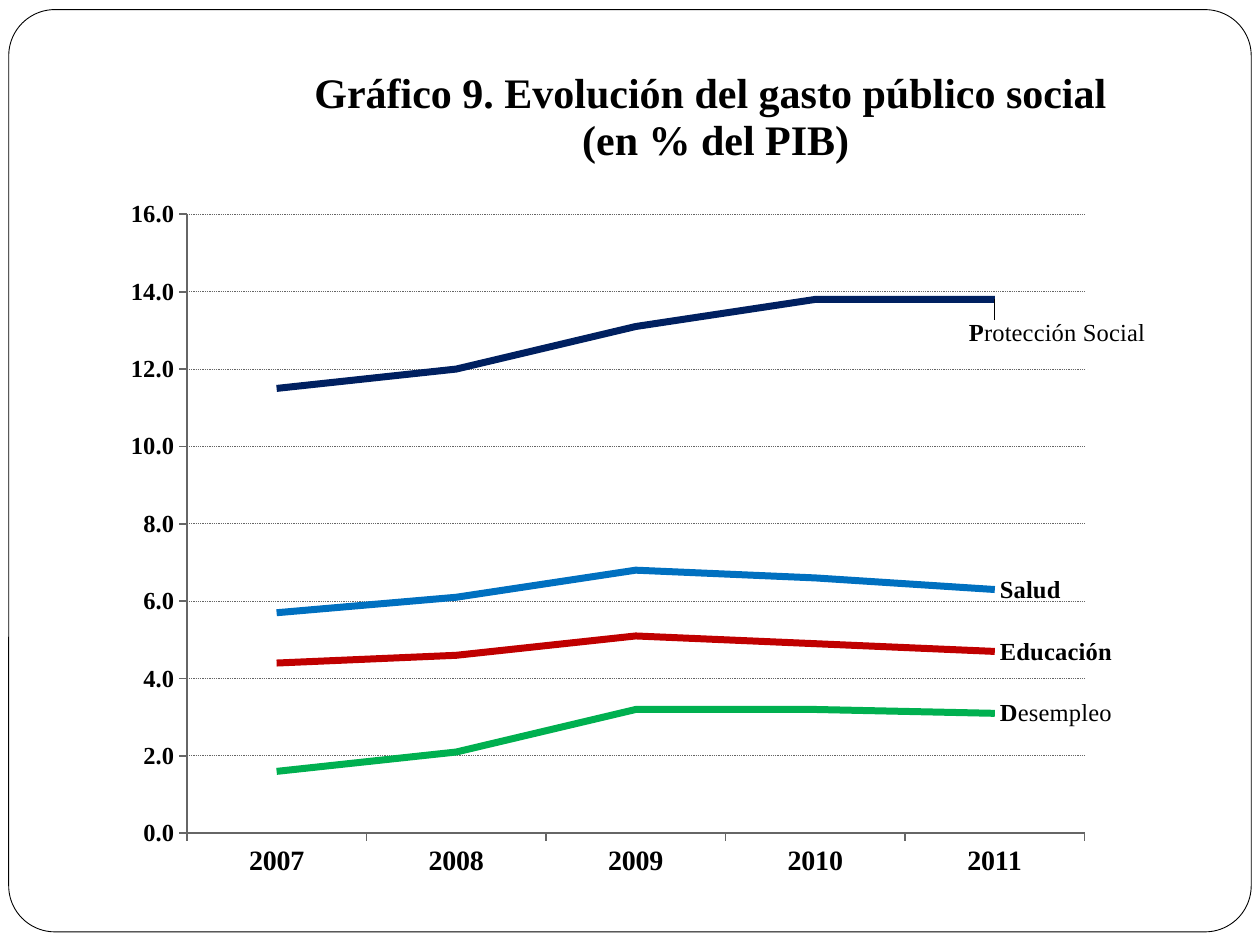
"""Build a slide with a line chart of public social spending as a share of GDP."""
from pptx import Presentation
from pptx.chart.data import CategoryChartData
from pptx.dml.color import RGBColor
from pptx.enum.chart import XL_CHART_TYPE, XL_LABEL_POSITION, XL_TICK_MARK
from pptx.enum.dml import MSO_LINE
from pptx.enum.shapes import MSO_SHAPE
from pptx.oxml import parse_xml
from pptx.oxml.ns import nsdecls
from pptx.util import Pt

YEARS = ["2007", "2008", "2009", "2010", "2011"]
SERIES = [
    ("Series 1", [5.7, 6.1, 6.8, 6.6, 6.3], "0070C0", ("Salud", "")),
    ("Series 2", [4.4, 4.6, 5.1, 4.9, 4.7], "C00000", ("Educación", "")),
    ("Series 3", [1.6, 2.1, 3.2, 3.2, 3.1], "00B050", ("D", "esempleo")),
    ("Series 4", [11.5, 12, 13.1, 13.8, 13.8], "002060", ("P", "rotección Social")),
]
TITLE = "Gráfico 9. Evolución del gasto público social \n(en % del PIB)"


def color(value):
    return RGBColor.from_string(value)


def manual_layout(edge=False, target=None, **fractions):
    parts = [f'<c:layoutTarget val="{target}"/>'] if target else []
    if edge:
        parts.append('<c:xMode val="edge"/><c:yMode val="edge"/>')
    parts += [f'<c:{key} val="{value}"/>' for key, value in fractions.items()]
    return parse_xml(
        f'<c:layout {nsdecls("c")}><c:manualLayout>{"".join(parts)}</c:manualLayout></c:layout>'
    )


class SlideBuilder:
    font_name = "Times New Roman"
    text_color = "000000"
    axis_color = "666666"

    def __init__(self, slide):
        self.slide = slide

    def style(self, font, size, bold=True):
        font.name = self.font_name
        font.size = Pt(size)
        font.bold = bold
        font.color.rgb = color(self.text_color)

    def frame(self, left, top, width, height):
        shape = self.slide.shapes.add_shape(
            MSO_SHAPE.ROUNDED_RECTANGLE, Pt(left), Pt(top), Pt(width), Pt(height)
        )
        shape.adjustments[0] = 0.05
        shape.shadow.inherit = False
        shape.fill.solid()
        shape.fill.fore_color.rgb = color("FFFFFF")
        shape.line.color.rgb = color(self.text_color)
        shape.line.width = Pt(0.5)

    def line_chart(self, left, top, width, height):
        data = CategoryChartData(number_format="0.0")
        data.categories = YEARS
        for name, values, _, _ in SERIES:
            data.add_series(name, values)
        chart = self.slide.shapes.add_chart(
            XL_CHART_TYPE.LINE, Pt(left), Pt(top), Pt(width), Pt(height), data
        ).chart
        self.style(chart.font, 10, bold=False)
        chart.has_legend = False
        plot_area = chart.plots[0]._element.getparent()
        for layout in plot_area.findall("{*}layout"):
            plot_area.remove(layout)
        plot_area.insert(
            0, manual_layout(True, "inner", x=0.07, y=0.19, w=0.87, h=0.74)
        )
        return chart

    def chart_title(self, chart, text):
        title = chart.chart_title
        title.text_frame.text = text
        for paragraph in title.text_frame.paragraphs:
            for run in paragraph.runs:
                self.style(run.font, 24)
        title.include_in_layout = False
        element = title._element
        for layout in element.findall("{*}layout"):
            element.remove(layout)
        element.find("{*}tx").addnext(manual_layout(True, x=0.19, y=0.01))

    def axis(self, axis, size):
        self.style(axis.tick_labels.font, size)
        axis.major_tick_mark = XL_TICK_MARK.OUTSIDE
        axis.minor_tick_mark = XL_TICK_MARK.NONE
        axis.format.line.color.rgb = color(self.axis_color)
        axis.format.line.width = Pt(1)

    def value_scale(self, axis, maximum, step):
        axis.minimum_scale = 0
        axis.maximum_scale = maximum
        axis.major_unit = step
        axis.tick_labels.number_format = "#,##0.0"
        axis.tick_labels.number_format_is_linked = False
        line = axis.major_gridlines.format.line
        line.color.rgb = color(self.axis_color)
        line.width = Pt(0.5)
        line.dash_style = MSO_LINE.ROUND_DOT

    def series(self, series, line_color):
        series.smooth = False
        series.format.line.color.rgb = color(line_color)
        series.format.line.width = Pt(4)

    def end_label(self, series, bold_text, plain_text):
        label = series.points[len(YEARS) - 1].data_label
        paragraph = label.text_frame.paragraphs[0]
        for text, bold in ((bold_text, True), (plain_text, False)):
            if text:
                run = paragraph.add_run()
                run.text = text
                self.style(run.font, 14, bold)
        label.position = XL_LABEL_POSITION.RIGHT

    def shift_label(self, series, x, y):
        label = series._element.find(".//{*}dLbl")
        for layout in label.findall("{*}layout"):
            label.remove(layout)
        label.find("{*}idx").addnext(manual_layout(x=x, y=y))


def main():
    presentation = Presentation()
    presentation.slide_width = Pt(720)
    presentation.slide_height = Pt(540)
    builder = SlideBuilder(presentation.slides.add_slide(presentation.slide_layouts[6]))
    builder.frame(5, 5.5, 710, 527)
    chart = builder.line_chart(65.5, 31.7, 589.7, 478)
    builder.chart_title(chart, TITLE)
    builder.axis(chart.category_axis, 16)
    builder.axis(chart.value_axis, 14)
    builder.value_scale(chart.value_axis, 16, 2)
    for series, (_, _, line_color, label) in zip(chart.plots[0].series, SERIES):
        builder.series(series, line_color)
        builder.end_label(series, *label)
    builder.shift_label(chart.plots[0].series[3], -0.03, 0.04)
    presentation.save("out.pptx")


if __name__ == "__main__":
    main()
